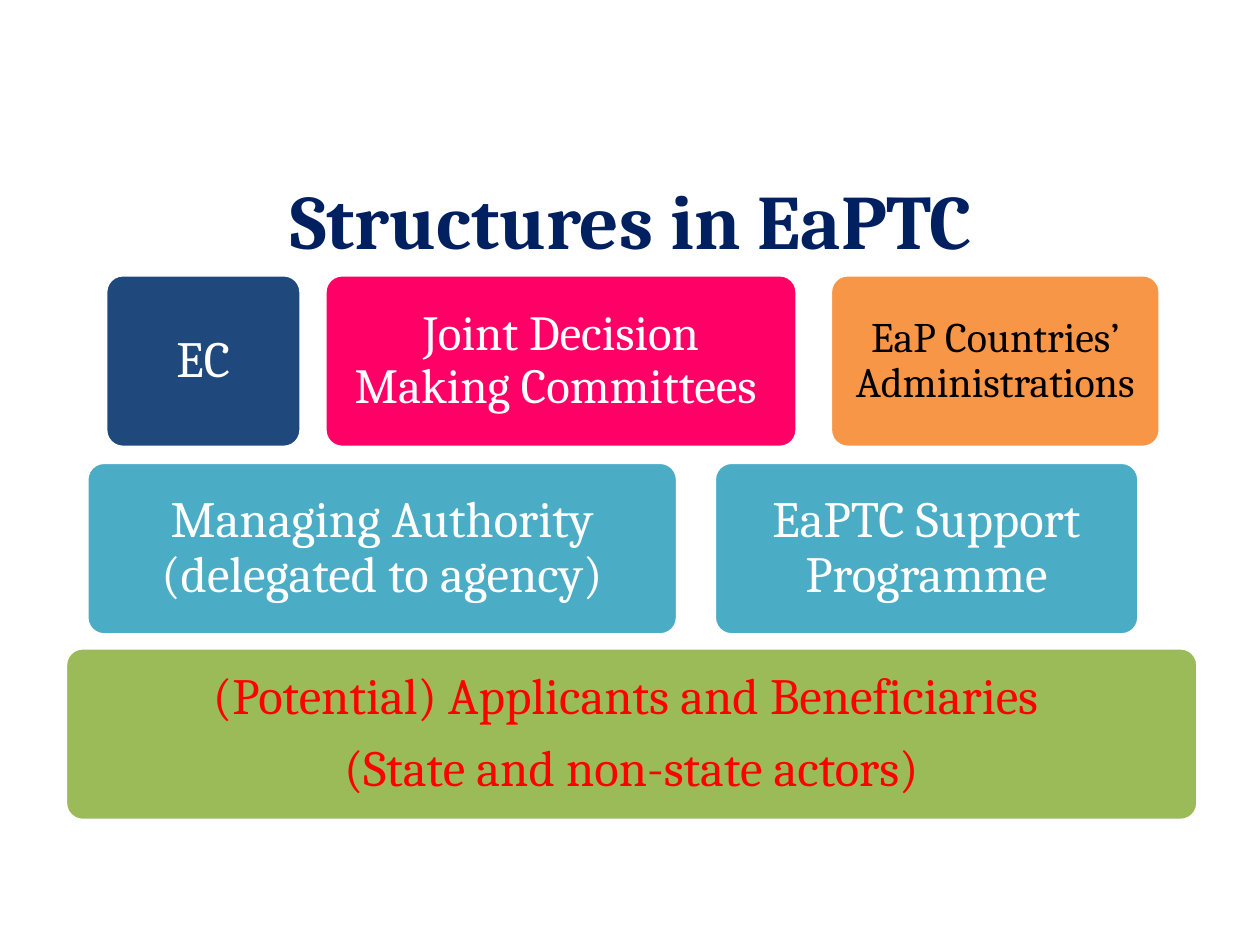
from pptx import Presentation
from pptx.dml.color import RGBColor
from pptx.enum.shapes import MSO_SHAPE as Shape
from pptx.enum.text import MSO_ANCHOR as Anchor, PP_ALIGN as Align
from pptx.util import Cm, Pt

COLORS = {
    "navy": "002060",
    "blue": "1F497D",
    "pink": "FF0066",
    "orange": "F79646",
    "teal": "4BACC6",
    "green": "9BBB59",
    "red": "FF0000",
    "white": "FFFFFF",
    "black": "000000",
}
FONT = "Cambria"
BLOCK_HEIGHT = 3.48

# Each row: top, then blocks of (left, width, fill, lines, text format)
ROWS = [
    (5.54, [
        (2.13, 3.94, "blue", ["EC"], {}),
        (6.55, 9.52, "pink", ["Joint Decision Making Committees "], {"size": 28}),
        (16.74, 6.65, "orange", ["EaP Countries’ Administrations"],
         {"size": 24, "color": "black", "inset": 0.35}),
    ]),
    (9.32, [
        (1.75, 11.91, "teal", ["Managing Authority (delegated to agency)"], {}),
        (14.4, 8.56, "teal", ["EaPTC Support Programme"], {}),
    ]),
    (13.06, [
        (1.32, 22.83, "green",
         ["(Potential) Applicants and Beneficiaries ",
          "(State and non-state actors)"], {"color": "red"}),
    ]),
]


def rgb(name):
    return RGBColor.from_string(COLORS[name])


def write_text(box, lines, *, size=29, color="white", bold=False,
               inset=0.4, spacing=0.9, after=10):
    frame = box.text_frame
    frame.word_wrap = True
    frame.vertical_anchor = Anchor.MIDDLE
    frame.margin_left = frame.margin_right = Cm(inset)
    frame.margin_top = frame.margin_bottom = Cm(inset)
    for index, line in enumerate(lines):
        para = frame.add_paragraph() if index else frame.paragraphs[0]
        para.alignment = Align.CENTER
        para.line_spacing = spacing
        para.space_after = Pt(after)
        span = para.add_run()
        span.text = line
        span.font.name = FONT
        span.font.size = Pt(size)
        span.font.bold = bold
        span.font.color.rgb = rgb(color)


def add_title(page, text):
    box = page.shapes.add_textbox(Cm(1.3), Cm(3.12), Cm(22.86), Cm(2.59))
    write_text(box, [text], size=44, color="navy", bold=True,
               inset=0.13, spacing=1.0, after=0)


def add_block(page, left, top, width, fill, lines, text_format):
    block = page.shapes.add_shape(Shape.ROUNDED_RECTANGLE, Cm(left), Cm(top),
                                  Cm(width), Cm(BLOCK_HEIGHT))
    block.adjustments[0] = 0.1
    block.shadow.inherit = False
    block.fill.solid()
    block.fill.fore_color.rgb = rgb(fill)
    block.line.color.rgb = rgb("white")
    block.line.width = Pt(2)
    write_text(block, lines, **text_format)


def main():
    deck = Presentation()
    deck.slide_width, deck.slide_height = Cm(25.4), Cm(19.05)
    page = deck.slides.add_slide(deck.slide_layouts[6])

    # Heading
    add_title(page, "Structures in EaPTC")

    # Tiers of bodies, from top to bottom
    for top, blocks in ROWS:
        for left, width, fill, lines, text_format in blocks:
            add_block(page, left, top, width, fill, lines, text_format)

    deck.save("out.pptx")


if __name__ == "__main__":
    main()
